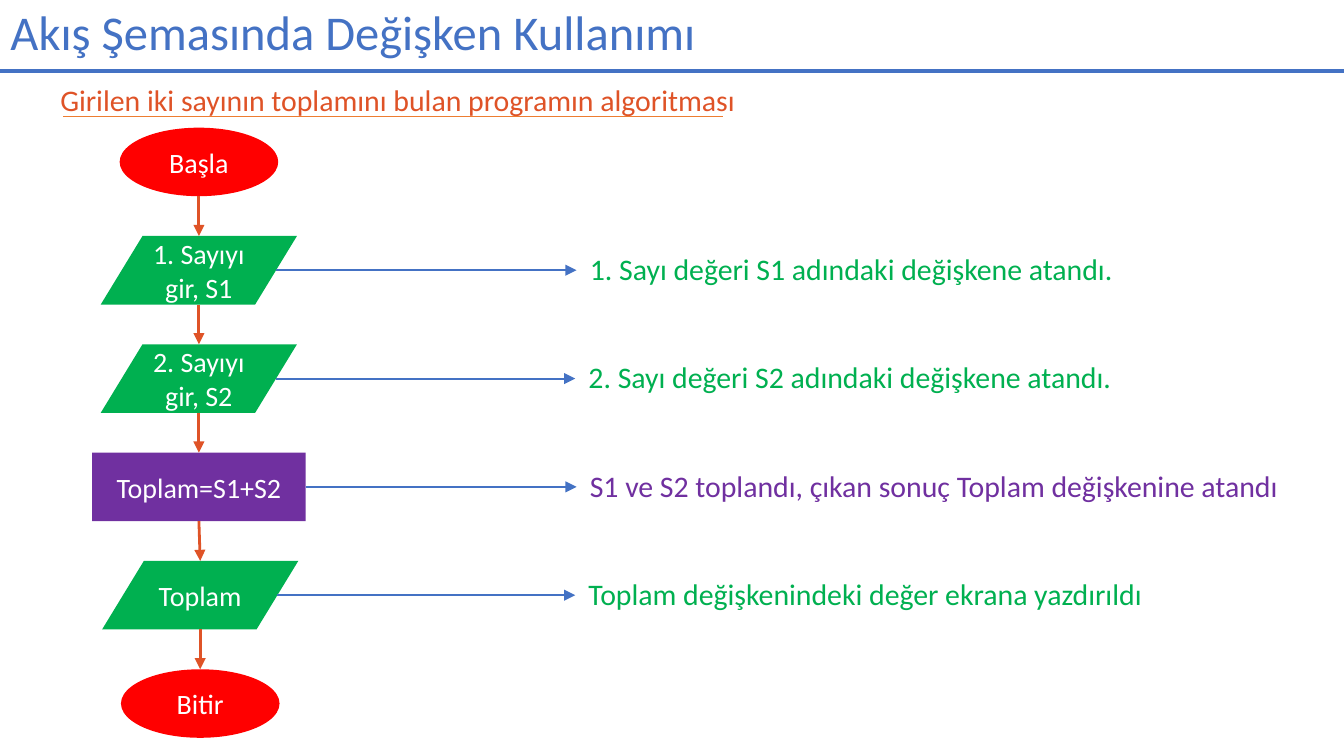
from dataclasses import dataclass
from typing import Optional

from lxml import etree
from pptx import Presentation
from pptx.dml.color import RGBColor
from pptx.enum import shapes, text
from pptx.oxml.ns import qn
from pptx.util import Inches, Pt

BLUE, ORANGE, RED = "4472C4", "DF5327", "FF0000"
GREEN, PURPLE, WHITE = "00B050", "7030A0", "FFFFFF"
OVAL = shapes.MSO_SHAPE.OVAL
INPUT = shapes.MSO_SHAPE.PARALLELOGRAM
PROCESS = shapes.MSO_SHAPE.RECTANGLE
WIDTHS = {OVAL: 1.18, INPUT: 1.46, PROCESS: 1.59}
FIRST_TOP, LAST_TOP, STEP_HEIGHT = 0.95, 4.98, 0.51
SLANT = 0.61
TOP, BOTTOM, RIGHT = 0, 2, 3


@dataclass
class Step:
    label: str
    kind: shapes.MSO_SHAPE
    color: str
    center: float = 1.48
    note: str = ""
    note_left: float = 4.29


STEPS = [
    Step("Başla", OVAL, RED),
    Step("1. Sayıyı gir, S1", INPUT, GREEN,
         note="1. Sayı değeri S1 adındaki değişkene atandı."),
    Step("2. Sayıyı gir, S2", INPUT, GREEN, note_left=4.28,
         note="2. Sayı değeri S2 adındaki değişkene atandı."),
    Step("Toplam=S1+S2", PROCESS, PURPLE,
         note="S1 ve S2 toplandı, çıkan sonuç Toplam değişkenine atandı"),
    Step("Toplam", INPUT, GREEN, center=1.49, note_left=4.28,
         note="Toplam değişkenindeki değer ekrana yazdırıldı"),
    Step("Bitir", OVAL, RED, center=1.49),
]
PITCH = (LAST_TOP - FIRST_TOP) / (len(STEPS) - 1)


def rgb(color: str) -> RGBColor:
    return RGBColor.from_string(color)


def write(shape, words: str, size: float, color: str, **paragraph_format) -> None:
    shape.text_frame.word_wrap = True
    paragraph = shape.text_frame.paragraphs[0]
    for name, value in paragraph_format.items():
        setattr(paragraph, name, value)
    run = paragraph.add_run()
    run.text = words
    for name, value in {"name": "Calibri", "size": Pt(size)}.items():
        setattr(run.font, name, value)
    run.font.color.rgb = rgb(color)


def add_text(slide, left: float, top: float, words: str, color: str,
             size: float = 16, width: float = 5.51, height: float = 0.39,
             **paragraph_format):
    box = slide.shapes.add_textbox(
        Inches(left), Inches(top), Inches(width), Inches(height))
    write(box, words, size, color, **paragraph_format)
    return box


def add_line(slide, start: tuple[float, float], end: tuple[float, float],
             color: str, width: float, arrow: bool = False):
    line = slide.shapes.add_connector(
        shapes.MSO_CONNECTOR.STRAIGHT, *map(Inches, start + end))
    line.line.color.rgb = rgb(color)
    line.line.width = Pt(width)
    if arrow:
        outline = line._element.spPr.find(qn("a:ln"))
        etree.SubElement(outline, qn("a:tailEnd"), type="triangle")
    etree.SubElement(line._element.spPr, qn("a:effectLst"))
    return line


def add_step(slide, step: Step, top: float):
    width = WIDTHS[step.kind]
    shape = slide.shapes.add_shape(
        step.kind, Inches(step.center - width / 2), Inches(top),
        Inches(width), Inches(STEP_HEIGHT))
    if step.kind == INPUT:
        shape.adjustments[0] = SLANT
    shape.shadow.inherit = False
    shape.fill.solid()
    shape.fill.fore_color.rgb = rgb(step.color)
    shape.line.fill.background()
    shape.text_frame.vertical_anchor = text.MSO_ANCHOR.MIDDLE
    write(shape, step.label, 15, WHITE, alignment=text.PP_ALIGN.CENTER)
    return shape


def add_note(slide, step: Step, shape, top: float) -> None:
    add_text(slide, step.note_left, top + 0.06, step.note, step.color)
    # The slanted side crosses mid-height half a slant inside the corner
    inset = SLANT * STEP_HEIGHT / 2 if step.kind == INPUT else 0
    middle = top + STEP_HEIGHT / 2
    arrow = add_line(
        slide, (step.center + WIDTHS[step.kind] / 2 - inset, middle),
        (step.note_left, middle), BLUE, 1, arrow=True)
    if step.kind == PROCESS:
        arrow.begin_connect(shape, RIGHT)


def main() -> None:
    deck = Presentation()
    # Widescreen, 16:9
    deck.slide_width = Inches(10)
    deck.slide_height = deck.slide_width * 9 // 16
    slide = deck.slides.add_slide(deck.slide_layouts[6])

    # Heading and subheading with their rules
    title = add_text(slide, -0.02, -0.01, "Akış Şemasında Değişken Kullanımı",
                     BLUE, size=26, width=8.6, height=0.54, line_spacing=0.9)
    title.text_frame.vertical_anchor = text.MSO_ANCHOR.MIDDLE
    add_line(slide, (0, 0.53), (10, 0.53), BLUE, 2.25)
    add_text(slide, 0.35, 0.56,
             "Girilen iki sayının toplamını bulan programın algoritması", ORANGE)
    add_line(slide, (0.47, 0.87), (5.38, 0.87), "ED7D31", 0.5)

    # Flowchart steps, flow arrows and explanations
    previous: Optional[Step] = None
    previous_shape = None
    for index, step in enumerate(STEPS):
        top = FIRST_TOP + index * PITCH
        shape = add_step(slide, step, top)
        if previous:
            flow = add_line(
                slide, (previous.center, top - PITCH + STEP_HEIGHT),
                (step.center, top), ORANGE, 1.5, arrow=True)
            if previous.kind == PROCESS:
                flow.begin_connect(previous_shape, BOTTOM)
            if step.kind == PROCESS:
                flow.end_connect(shape, TOP)
        if step.note:
            add_note(slide, step, shape, top)
        previous, previous_shape = step, shape

    deck.save("out.pptx")


if __name__ == "__main__":
    main()
